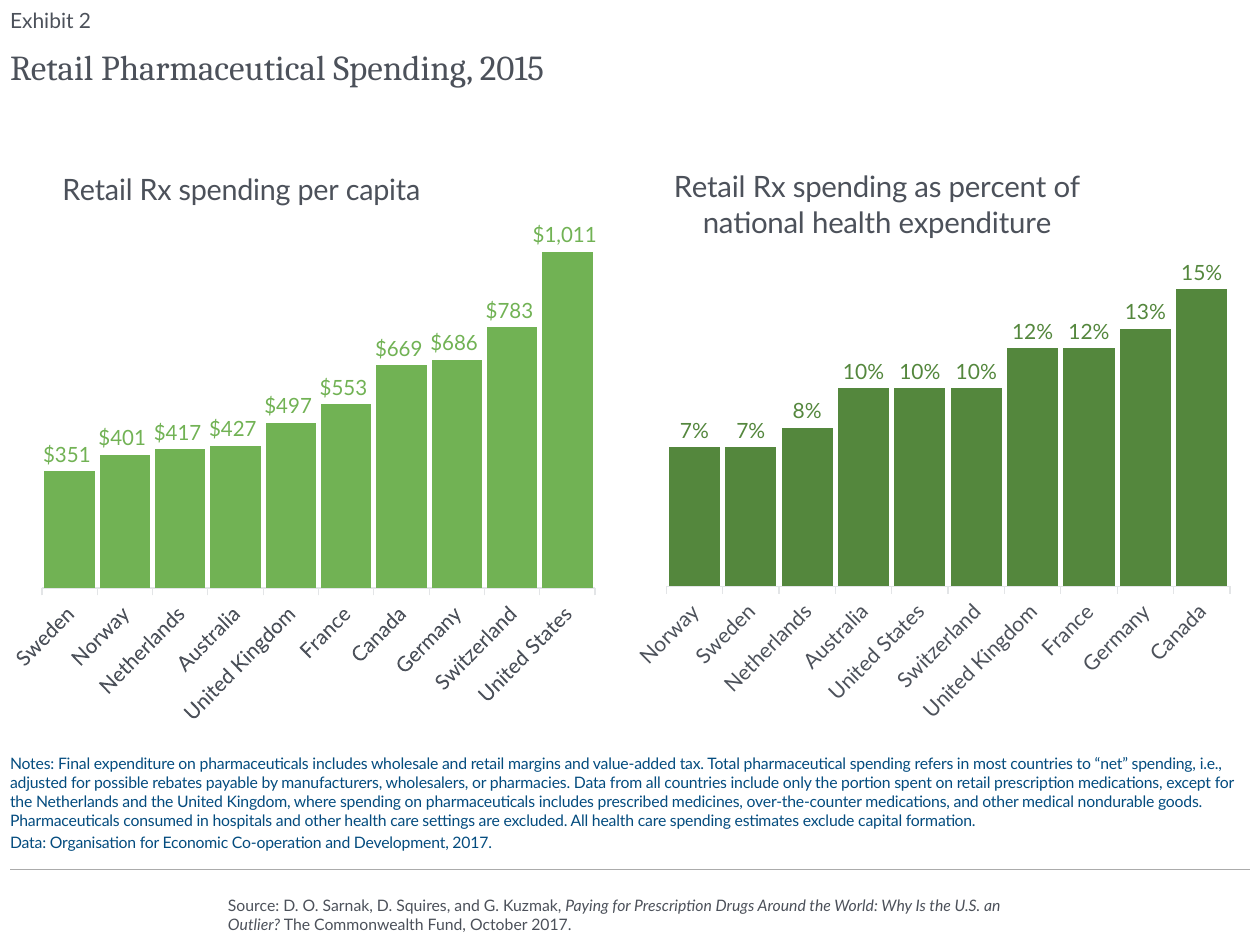
from lxml import etree
from pptx import Presentation
from pptx.chart.data import CategoryChartData
from pptx.dml.color import RGBColor
from pptx.enum.chart import XL_CHART_TYPE, XL_LABEL_POSITION, XL_TICK_LABEL_POSITION, XL_TICK_MARK
from pptx.enum.shapes import MSO_CONNECTOR
from pptx.enum.text import MSO_ANCHOR, MSO_AUTO_SIZE, PP_ALIGN
from pptx.oxml.ns import qn
from pptx.util import Inches, Pt

COLUMNS, OUTSIDE = XL_CHART_TYPE.COLUMN_CLUSTERED, XL_LABEL_POSITION.OUTSIDE_END
TOP, BOTTOM, LEFT = MSO_ANCHOR.TOP, MSO_ANCHOR.BOTTOM, PP_ALIGN.LEFT
C = {"text": "4C515A", "notes": "044C7F", "rule": "ABABAB", "axis": "E3E5E7",
     "light": "71B254", "dark": "54873D"}
MARGIN, WIDTH = 0.08, 9.84

# Content
EXHIBIT = "Exhibit 2"
TITLE = "Retail Pharmaceutical Spending, 2015"
NOTES = [
    "Notes: Final expenditure on pharmaceuticals includes wholesale and retail margins and "
    "value-added tax. Total pharmaceutical spending refers in most countries to “net” spending, "
    "i.e., adjusted for possible rebates payable by manufacturers, wholesalers, or pharmacies. "
    "Data from all countries include only the portion spent on retail prescription medications, "
    "except for the Netherlands and the United Kingdom, where spending on pharmaceuticals "
    "includes prescribed medicines, over-the-counter medications, and other medical nondurable "
    "goods. Pharmaceuticals consumed in hospitals and other health care settings are excluded. "
    "All health care spending estimates exclude capital formation.",
    "Data: Organisation for Economic Co-operation and Development, 2017.",
]
SOURCE = [
    ("Source: D. O. Sarnak, D. Squires, and G. Kuzmak, ", False),
    ("Paying for Prescription Drugs Around the World: Why Is the U.S. an Outlier?", True),
    (" The Commonwealth Fund, October 2017.", False),
]
CHARTS = [
    {"title": "Retail Rx spending per capita", "title_at": (0.07, 0.08),
     "data": [("Sweden", 351), ("Norway", 401), ("Netherlands", 417), ("Australia", 427),
              ("United Kingdom", 497), ("France", 553), ("Canada", 669), ("Germany", 686),
              ("Switzerland", 783), ("United States", 1011)],
     "at": (0.08, 0.9, 4.7, 4.9), "plot": (0.044, 0.122, 0.956, 0.647), "max": 1200,
     "format": '"$"#,##0_);[Red]\\("$"#,##0\\)', "color": "light", "value_axis": True},
    {"title": "Retail Rx spending as percent of\nnational health expenditure",
     "title_at": (0.06, 0.08),
     "data": [("Norway", 0.07), ("Sweden", 0.07), ("Netherlands", 0.08), ("Australia", 0.10),
              ("United States", 0.10), ("Switzerland", 0.10), ("United Kingdom", 0.12),
              ("France", 0.12), ("Germany", 0.13), ("Canada", 0.15)],
     "at": (5.03, 0.9, 4.77, 4.9), "plot": (0.054, 0.124, 0.938, 0.642), "max": 0.2,
     "format": "0%", "color": "dark", "value_axis": False},
]


def rgb(name):
    return RGBColor.from_string(C[name])


def set_font(font, size, color="text", name="Lato", bold=False, italic=False):
    for key, value in {"size": Pt(size), "name": name, "bold": bold, "italic": italic}.items():
        setattr(font, key, value)
    font.color.rgb = rgb(color)


def place(sp, left, top, width, height, anchor):
    for key, value in zip(("left", "top", "width", "height"), (left, top, width, height)):
        setattr(sp, key, Inches(value))
    tf = sp.text_frame
    frame = {"margin_left": 0, "margin_top": 0, "margin_right": 0, "margin_bottom": 0,
             "word_wrap": True, "auto_size": MSO_AUTO_SIZE.NONE, "vertical_anchor": anchor}
    for key, value in frame.items():
        setattr(tf, key, value)
    return tf


def add_run(p, text, size, **look):
    r = p.add_run()
    r.text = text
    set_font(r.font, size, **look)
    return r


def set_layout(parent, box, inner=False):
    """Fix a chart part at shares of the chart's size."""
    layout = parent.find(qn("c:layout"))
    if layout is None:
        layout = etree.Element(qn("c:layout"))
        before = parent.find(qn("c:tx"))
        parent.insert(0 if before is None else parent.index(before) + 1, layout)
    for child in list(layout):
        layout.remove(child)
    manual = etree.SubElement(layout, qn("c:manualLayout"))
    values = [("layoutTarget", "inner")] if inner else []
    values += [("xMode", "edge"), ("yMode", "edge"), *zip("xywh", box)]
    for tag, value in values:
        etree.SubElement(manual, qn(f"c:{tag}")).set("val", str(value))


def add_column_chart(s, item):
    data = CategoryChartData(number_format=item["format"])
    data.categories = [country for country, _ in item["data"]]
    data.add_series("Series 1", [value for _, value in item["data"]])
    chart = s.shapes.add_chart(COLUMNS, *map(Inches, item["at"]), data).chart
    set_font(chart.font, 14, name="Cabin")
    chart.has_legend = False

    # Chart title
    chart.has_title = True
    tf = chart.chart_title.text_frame
    tf.text = item["title"]
    for p in tf.paragraphs:
        set_font(p.runs[0].font, 16.8)
    chart.chart_title.include_in_layout = False
    set_layout(chart.chart_title._element, item["title_at"])

    # Columns and their values
    plot = chart.plots[0]
    plot.gap_width, plot.overlap, plot.vary_by_categories = 10, 100, False
    fill = plot.series[0].format.fill
    fill.solid()
    fill.fore_color.rgb = rgb(item["color"])
    plot.has_data_labels = True
    labels = plot.data_labels
    look = {"show_value": True, "position": OUTSIDE, "number_format": item["format"],
            "number_format_is_linked": False}
    for key, value in look.items():
        setattr(labels, key, value)
    set_font(labels.font, 12, item["color"])

    # Axes, with slanted country names
    cat, val = chart.category_axis, chart.value_axis
    set_font(cat.tick_labels.font, 12)
    cat._element.find(qn("c:txPr")).find(qn("a:bodyPr")).set("rot", "-2700000")
    cat.format.line.color.rgb = rgb("axis")
    cat.format.line.width = Pt(0.75)
    cat.major_tick_mark = XL_TICK_MARK.OUTSIDE
    val.minimum_scale, val.maximum_scale = 0, item["max"]
    val.has_major_gridlines = False
    val.visible = item["value_axis"]
    val.tick_label_position = XL_TICK_LABEL_POSITION.NONE
    val.format.line.fill.background()
    set_layout(chart._chartSpace.chart.plotArea, item["plot"], inner=True)


prs = Presentation()
prs.slide_width, prs.slide_height = Inches(10), Inches(7.5)
s = prs.slides.add_slide(prs.slide_layouts[0])

# Heading
tf = place(s.shapes.add_textbox(0, 0, 0, 0), MARGIN, 0.01, WIDTH, 0.25, BOTTOM)
add_run(tf.paragraphs[0], EXHIBIT, 12)
p = place(s.shapes.title, MARGIN, 0.33, WIDTH, 0.5, TOP).paragraphs[0]
p.alignment, p.line_spacing = LEFT, 1.1
add_run(p, TITLE, 20, name="Cambria")

for item in CHARTS:
    add_column_chart(s, item)

# Notes
tf = place(s.placeholders[1], MARGIN, 5.91, WIDTH, 0.85, BOTTOM)
for i, note in enumerate(NOTES):
    p = tf.add_paragraph() if i else tf.paragraphs[0]
    p.alignment, p.space_before = LEFT, Pt(1.8 if i else 0)
    r = add_run(p, note, 9, color="notes")
    r.font._element.set("spc", "-10")

# Rule and source
rule = s.shapes.add_connector(MSO_CONNECTOR.STRAIGHT, Inches(MARGIN + WIDTH), Inches(6.9),
                              Inches(MARGIN), Inches(6.9))
rule.line.color.rgb, rule.line.width = rgb("rule"), Pt(0.75)
etree.SubElement(rule._element.spPr, qn("a:effectLst"))
tf = place(s.shapes.add_textbox(0, 0, 0, 0), 1.81, 7, 6.4, 0.41, BOTTOM)
for text, italic in SOURCE:
    add_run(tf.paragraphs[0], text, 9, italic=italic)

prs.save("out.pptx")
